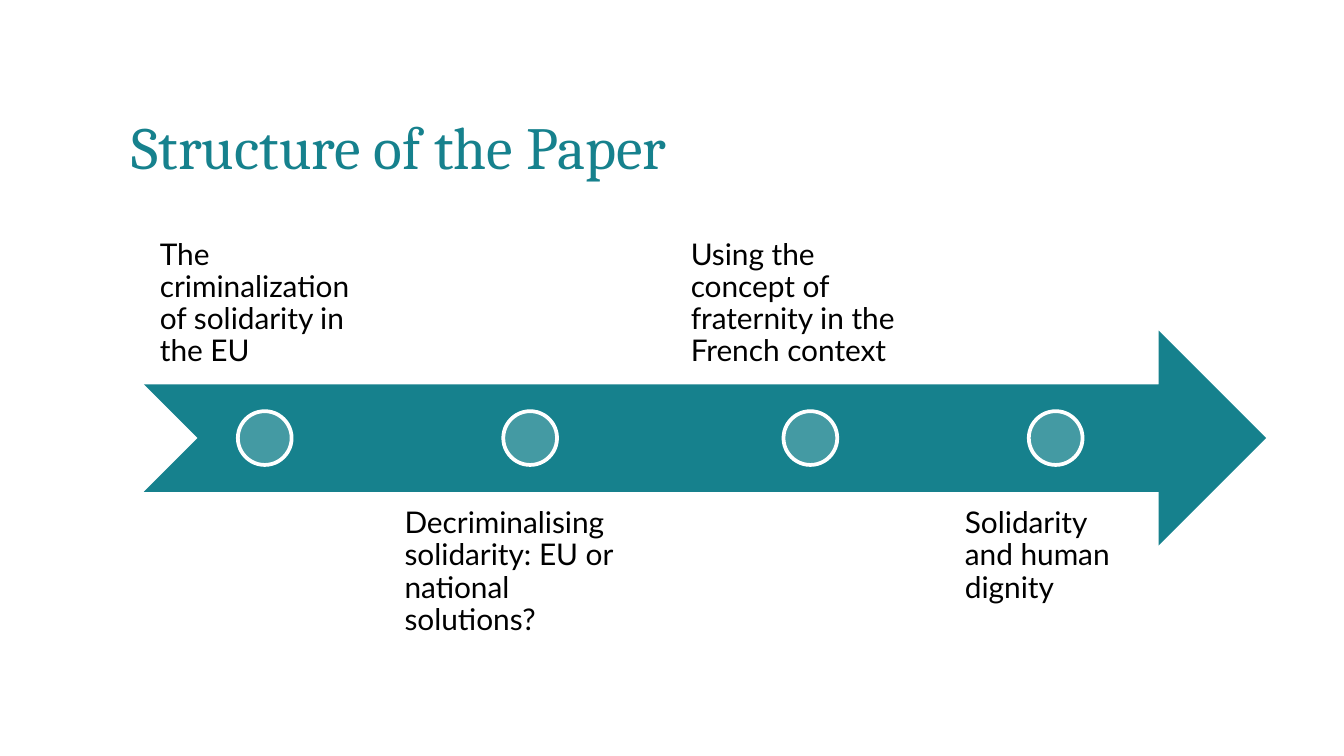
from lxml import etree
from pptx import Presentation
from pptx.dml.color import RGBColor
from pptx.enum.shapes import MSO_SHAPE
from pptx.enum.text import MSO_ANCHOR
from pptx.oxml.ns import qn
from pptx.util import Inches, Pt

ARROW = MSO_SHAPE.NOTCHED_RIGHT_ARROW
CIRCLE = MSO_SHAPE.OVAL
TOP, BOTTOM = MSO_ANCHOR.TOP, MSO_ANCHOR.BOTTOM

COLORS = {"teal": "16818D", "text": "000000", "marker": "FFFFFF"}

# Label and width of each step; labels alternate above and below the arrow.
STEPS = [
    ("The criminalization of solidarity in the EU", 1.74),
    ("Decriminalising solidarity: EU or national solutions?", 2.05),
    ("Using the concept of fraternity in the French context", 1.96),
    ("Solidarity and human dignity", 1.53),
]
STEP_GAP = 0.08
MARKER_SIZE = 0.4
MARKER_SHIFT = 0.03
MARKER_OPACITY = 20


def color(name):
    return RGBColor.from_string(COLORS[name])


def add_text(slide, box, text, font_name, size, color_name, line_spacing,
             inset=0, anchor=TOP):
    frame = slide.shapes.add_textbox(*map(Inches, box)).text_frame
    frame.word_wrap = True
    frame.vertical_anchor = anchor
    frame.margin_left = frame.margin_right = Inches(inset)
    frame.margin_top = frame.margin_bottom = Inches(inset)
    paragraph = frame.paragraphs[0]
    paragraph.text = text
    paragraph.line_spacing = line_spacing
    paragraph.font.name = font_name
    paragraph.font.size = Pt(size)
    paragraph.font.color.rgb = color(color_name)


def add_filled_shape(slide, preset, box, color_name):
    shape = slide.shapes.add_shape(preset, *map(Inches, box))
    shape.shadow.inherit = False
    shape.fill.solid()
    shape.fill.fore_color.rgb = color(color_name)
    shape.line.fill.background()
    return shape


def add_marker(slide, center_x, center_y):
    box = (center_x - MARKER_SIZE / 2, center_y - MARKER_SIZE / 2,
           MARKER_SIZE, MARKER_SIZE)
    marker = add_filled_shape(slide, CIRCLE, box, "marker")
    fill_color = marker.element.spPr.find(qn("a:solidFill"))[0]
    alpha = etree.SubElement(fill_color, qn("a:alpha"))
    alpha.set("val", str(MARKER_OPACITY * 1000))
    marker.line.color.rgb = color("marker")
    marker.line.width = Pt(2)


def add_timeline(slide, left, top, width, height):
    """Place an arrow over the middle, overlapping the label bands."""
    band = 0.4 * height
    add_filled_shape(slide, ARROW,
                     (left, top + (height - band) / 2, width, band), "teal")
    step_left = left
    for index, (label, step_width) in enumerate(STEPS):
        above = index % 2 == 0
        label_top = top if above else top + height - band
        add_text(slide, (step_left, label_top, step_width, band), label,
                 "Lato", 16, "text", 0.9, 0.12, BOTTOM if above else TOP)
        add_marker(slide, step_left + step_width / 2 + MARKER_SHIFT,
                   top + height / 2)
        step_left += step_width + STEP_GAP


def main():
    prs = Presentation()
    prs.slide_width = Inches(10)
    prs.slide_height = prs.slide_width * 9 // 16
    slide = prs.slides.add_slide(prs.slide_layouts[6])
    add_timeline(slide, 1.07, 1.26, 8.35, 4)
    add_text(slide, (0.98, 0.77, 7.29, 0.53), "Structure of the Paper",
             "Cambria", 32, "teal", Pt(42))
    prs.save("out.pptx")


if __name__ == "__main__":
    main()
